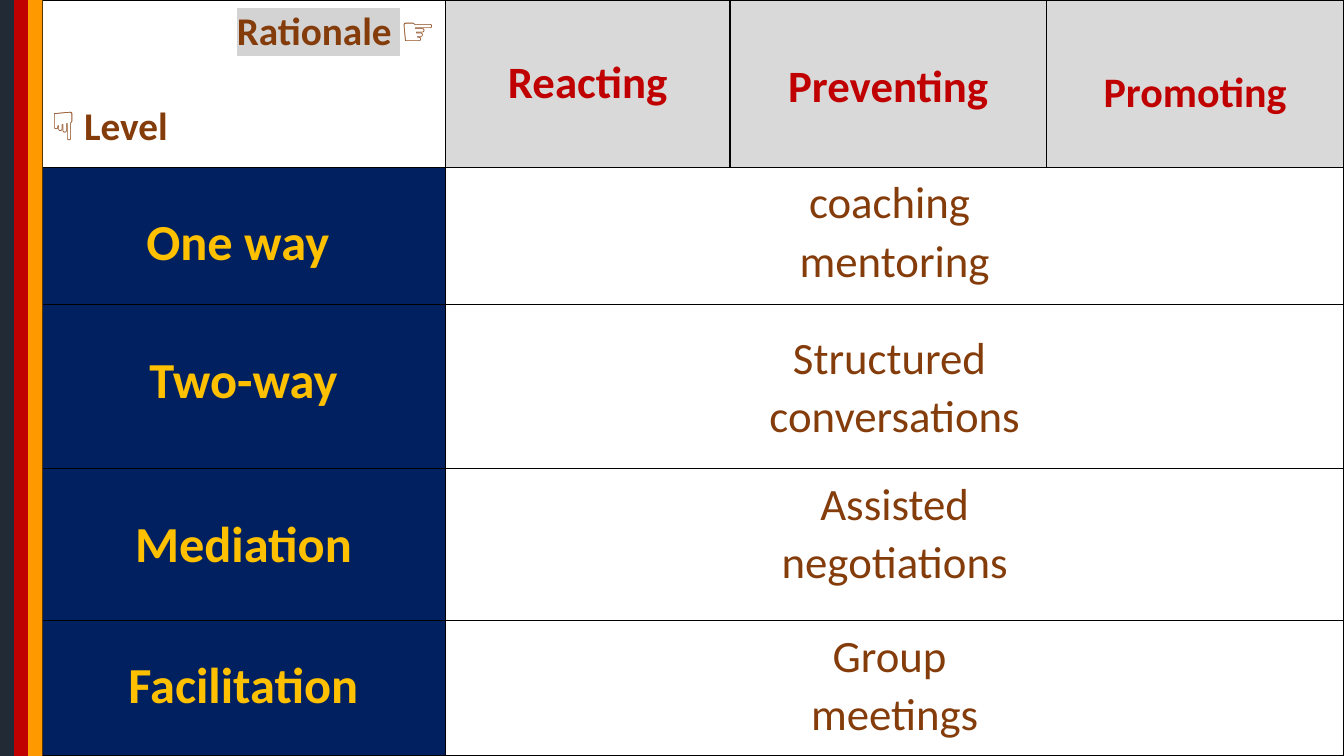
from lxml import etree
from pptx import Presentation
from pptx.dml.color import RGBColor as RGB
from pptx.enum.shapes import MSO_SHAPE as SHAPE
from pptx.enum.text import PP_ALIGN as ALIGN
from pptx.oxml import parse_xml
from pptx.oxml.ns import nsdecls, qn
from pptx.util import Inches, Pt

CHARCOAL = RGB(0x22, 0x2A, 0x35)
RED = RGB(0xC0, 0x00, 0x00)
ORANGE = RGB(0xFF, 0x99, 0x00)
NAVY = RGB(0x00, 0x20, 0x60)
GOLD = RGB(0xFF, 0xC0, 0x00)
BROWN = RGB(0x84, 0x3C, 0x0B)
GREY = RGB(0xD9, 0xD9, 0xD9)
WHITE = RGB(0xFF, 0xFF, 0xFF)
BLACK = RGB(0x00, 0x00, 0x00)
HIGHLIGHT = RGB(0xD3, 0xD3, 0xD3)

SLIDE_W, SLIDE_H = 13.33, 7.5
COLS = [4.01, 2.82, 3.14, 2.95]
ROWS = [1.66, 1.36, 1.63, 1.51, 1.34]
LINE_SPACING = 1.07
THIN, THICK = 1, 2.25

HEADERS = [("Reacting", 32, 0.52), ("Preventing", 32, 0.56), ("Promoting", 30, 0.63)]
LEVELS = [
    ("One way ", 0.41, ["coaching ", "mentoring"], 0.05),
    ("Two-way", 0.41, ["Structured ", "conversations"], 0.23),
    ("Mediation", 0.41, ["Assisted", "negotiations"], 0.05),
    ("Facilitation", 0.3, ["Group ", "meetings"], 0.05),
]


def add_run(p, text, size, color, bold):
    r = p.add_run()
    r.text = text
    for name, value in {"name": "Calibri", "size": Pt(size), "bold": bold}.items():
        setattr(r.font, name, value)
    r.font.color.rgb = color
    return r


def highlight(r, color):
    fill = r.font._element.find(qn("a:solidFill"))
    fill.addnext(parse_xml(
        f'<a:highlight {nsdecls("a")}><a:srgbClr val="{color}"/></a:highlight>'))


def set_borders(cell, widths):
    tc_pr = cell._tc.get_or_add_tcPr()
    for i, (side, width) in enumerate(zip("LRTB", widths)):
        ln = etree.Element(qn(f"a:ln{side}"), w=str(Pt(width)))
        fill = etree.SubElement(ln, qn("a:solidFill"))
        etree.SubElement(fill, qn("a:srgbClr"), val=str(BLACK))
        tc_pr.insert(i, ln)


def fill_cell(cell, color):
    cell.fill.solid()
    cell.fill.fore_color.rgb = color


def write_cell(cell, lines, size, color, bold, top):
    cell.margin_top = Inches(top)
    tf = cell.text_frame
    for i, line in enumerate(lines):
        p = tf.add_paragraph() if i else tf.paragraphs[0]
        p.alignment = ALIGN.CENTER
        p.line_spacing = LINE_SPACING
        add_run(p, line, size, color, bold)


def write_corner(cell):
    tf = cell.text_frame
    p = tf.paragraphs[0]
    p.alignment = ALIGN.RIGHT
    p.line_spacing = LINE_SPACING
    highlight(add_run(p, "Rationale ", 28, BROWN, True), HIGHLIGHT)
    add_run(p, "☞", 28, BROWN, True)
    p = tf.add_paragraph()
    p.line_spacing = LINE_SPACING
    p.space_before = Pt(31)
    add_run(p, "☟ Level", 28, BROWN, True)


def add_level_table(slide, x, y, w, h):
    frame = slide.shapes.add_table(
        len(ROWS), len(COLS), Inches(x), Inches(y), Inches(w), Inches(h))
    table = frame.table
    table.first_row = table.horz_banding = False
    for col, width in zip(table.columns, COLS):
        col.width = Inches(w * width / sum(COLS))
    for row, height in zip(table.rows, ROWS):
        row.height = Inches(h * height / sum(ROWS))

    last_row, last_col = len(ROWS) - 1, len(COLS) - 1
    for i in range(len(ROWS)):
        for j in range(len(COLS)):
            cell = table.cell(i, j)
            edges = (j == 0, j == last_col, i == 0, i == last_row)
            set_borders(cell, [THICK if edge else THIN for edge in edges])
            fill_cell(cell, WHITE)

    write_corner(table.cell(0, 0))
    for j, (text, size, top) in enumerate(HEADERS, 1):
        cell = table.cell(0, j)
        fill_cell(cell, GREY)
        write_cell(cell, [text], size, RED, True, top)
    for i, (level, level_top, methods, methods_top) in enumerate(LEVELS, 1):
        cell = table.cell(i, 0)
        fill_cell(cell, NAVY)
        write_cell(cell, [level], 36, GOLD, True, level_top)
        cell = table.cell(i, 1)
        cell.merge(table.cell(i, last_col))
        write_cell(cell, methods, 32, BROWN, False, methods_top)


def add_side_stripes(slide, x, y, w, h):
    step = w / 3
    for i, color in enumerate([CHARCOAL, RED, ORANGE]):
        sp = slide.shapes.add_shape(
            SHAPE.RECTANGLE, Inches(x + i * step), Inches(y), Inches(step), Inches(h))
        sp.shadow.inherit = False
        sp.fill.solid()
        sp.fill.fore_color.rgb = color
        sp.line.fill.background()


def main():
    prs = Presentation()
    prs.slide_width, prs.slide_height = Inches(SLIDE_W), Inches(SLIDE_H)
    slide = prs.slides.add_slide(prs.slide_layouts[6])
    add_level_table(slide, 0.41, 0, sum(COLS), SLIDE_H)
    add_side_stripes(slide, 0, 0, 0.42, SLIDE_H)
    prs.save("out.pptx")


if __name__ == "__main__":
    main()
